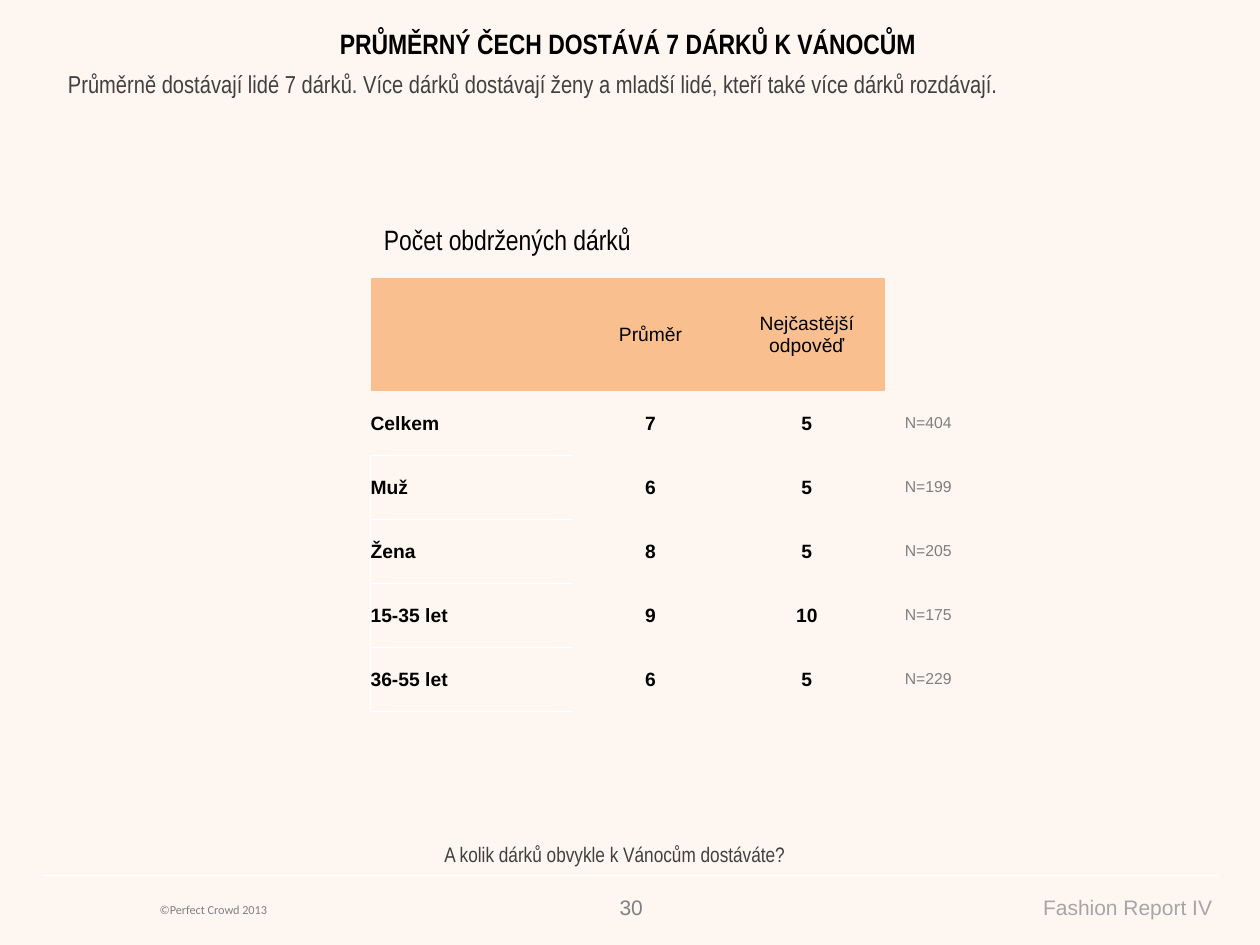
from lxml.etree import SubElement
from pptx import Presentation
from pptx.dml.color import RGBColor
from pptx.enum.shapes import MSO_CONNECTOR
from pptx.enum.text import MSO_ANCHOR, MSO_AUTO_SIZE, PP_ALIGN
from pptx.oxml.ns import qn
from pptx.util import Cm, Pt

COLORS = {
    "background": "FEF6F0",
    "header": "FABF8F",
    "white": "FFFFFF",
    "black": "000000",
    "body": "404040",
    "muted": "808080",
    "sample": "7F7F7F",
    "report": "A6A6A6",
}
PLAIN_TABLE_STYLE = "{2D5ABB26-0587-4C30-8999-92F81FD0307C}"
ROW_HEIGHT = 1.29
HEADER_HEIGHT = 2.28
TABLE_TOP = 5.61

GIFT_ROWS = [
    ("", "Průměr", "Nejčastější odpověď"),
    ("Celkem", "7", "5"),
    ("Muž", "6", "5"),
    ("Žena", "8", "5"),
    ("15-35 let", "9", "10"),
    ("36-55 let", "6", "5"),
]
SAMPLE_ROWS = [("N=404",), ("N=199",), ("N=205",), ("N=175",), ("N=229",)]


def rgb(name):
    return RGBColor.from_string(COLORS[name])


def format_text(text_frame, size, color, font="Arial", bold=False, align=PP_ALIGN.LEFT):
    for paragraph in text_frame.paragraphs:
        paragraph.alignment = align
        for run in paragraph.runs:
            run.font.name = font
            run.font.size = Pt(size)
            run.font.bold = bold
            run.font.color.rgb = rgb(color)


def add_text(slide, text, box, size, color, grow=True, anchor=MSO_ANCHOR.TOP, **style):
    """Add a text box; box is left, top, width and height in centimetres."""
    shape = slide.shapes.add_textbox(*(Cm(length) for length in box))
    text_frame = shape.text_frame
    text_frame.word_wrap = True
    text_frame.auto_size = MSO_AUTO_SIZE.SHAPE_TO_FIT_TEXT if grow else MSO_AUTO_SIZE.NONE
    text_frame.vertical_anchor = anchor
    text_frame.text = text
    format_text(text_frame, size, color, **style)


def add_footer_line(slide):
    line = slide.shapes.add_connector(
        MSO_CONNECTOR.STRAIGHT, Cm(0.84), Cm(17.65), Cm(24.56), Cm(17.65))
    line.line.color.rgb = rgb("white")
    line.line.width = Pt(0.75)
    SubElement(line._element.spPr, qn("a:effectLst"))


def add_borders(cell, sides):
    """Draw thin white borders; sides are given in the order L, R, T, B."""
    for side in sides:
        border = SubElement(cell._tc.get_or_add_tcPr(), qn(f"a:ln{side}"), w=str(Pt(0.5)))
        fill = SubElement(border, qn("a:solidFill"))
        SubElement(fill, qn("a:srgbClr"), val=COLORS["white"])


def add_plain_table(slide, rows, left, top, widths, heights):
    """Add a table without style, margins or fills and return it."""
    table = slide.shapes.add_table(
        len(rows), len(widths), Cm(left), Cm(top), Cm(sum(widths)), Cm(sum(heights))).table
    table.first_row = table.horz_banding = False
    table._tbl.tblPr.find(qn("a:tableStyleId")).text = PLAIN_TABLE_STYLE
    for column, width in zip(table.columns, widths):
        column.width = Cm(width)
    for row, height, texts in zip(table.rows, heights, rows):
        row.height = Cm(height)
        for cell, text in zip(row.cells, texts):
            cell.text = text
            cell.vertical_anchor = MSO_ANCHOR.MIDDLE
            cell.margin_left = cell.margin_right = cell.margin_top = cell.margin_bottom = 0
    return table


def add_gift_table(slide):
    heights = [HEADER_HEIGHT] + [ROW_HEIGHT] * (len(GIFT_ROWS) - 1)
    table = add_plain_table(slide, GIFT_ROWS, 7.47, TABLE_TOP, [4.07, 3.15, 3.15], heights)
    for row_index, row in enumerate(table.rows):
        for column_index, cell in enumerate(row.cells):
            is_header, is_label = row_index == 0, column_index == 0
            format_text(cell.text_frame, 11, "black", bold=not is_header,
                        align=PP_ALIGN.LEFT if is_label else PP_ALIGN.CENTER)
            if is_header:
                cell.fill.solid()
                cell.fill.fore_color.rgb = rgb("header")
                continue
            if is_label:
                add_borders(cell, "B" if row_index == 1 else "LTB")
            cell.fill.background()


def add_sample_table(slide):
    table = add_plain_table(slide, SAMPLE_ROWS, 18.24, TABLE_TOP + HEADER_HEIGHT,
                            [1.55], [ROW_HEIGHT] * len(SAMPLE_ROWS))
    for cell in table.iter_cells():
        format_text(cell.text_frame, 9, "sample")
        cell.fill.background()


def add_footer(slide):
    add_footer_line(slide)
    add_text(slide, "©Perfect Crowd 2013", (2.97, 18.06, 7.39, 0.56), 7, "muted",
             font="Calibri")
    add_text(slide, "Fashion Report IV", (15.27, 17.91, 9.42, 0.76), 12, "report",
             align=PP_ALIGN.RIGHT)
    add_text(slide, "30", (12.17, 17.91, 1.04, 0.76), 12, "muted", align=PP_ALIGN.RIGHT)


def main():
    presentation = Presentation()
    presentation.slide_width, presentation.slide_height = Cm(25.4), Cm(19.05)
    slide = presentation.slides.add_slide(presentation.slide_layouts[6])
    slide.background.fill.solid()
    slide.background.fill.fore_color.rgb = rgb("background")

    add_footer(slide)
    add_text(slide, "A kolik dárků obvykle k\u00a0Vánocům dostáváte?".replace("\u00a0", " "),
             (0.89, 16.33, 23.01, 1.27), 12, "body", grow=False,
             anchor=MSO_ANCHOR.BOTTOM, font="Arial Narrow", align=PP_ALIGN.CENTER)
    add_text(slide, "PRŮMĚRNÝ ČECH DOSTÁVÁ 7 DÁRKŮ K VÁNOCŮM", (1.42, 0.41, 22.48, 0.94),
             16, "black", font="Arial Narrow", bold=True, align=PP_ALIGN.CENTER)
    add_text(slide, "Průměrně dostávají lidé 7 dárků. Více dárků dostávají ženy a mladší lidé, "
             "kteří také více dárků rozdávají.", (1.12, 1.27, 23.44, 6.96), 14, "body",
             grow=False, font="Arial Narrow")
    add_gift_table(slide)
    add_sample_table(slide)
    add_text(slide, "Počet obdržených dárků", (7.49, 4.37, 8.79, 0.94), 16, "black",
             font="Arial Narrow")
    presentation.save("out.pptx")


if __name__ == "__main__":
    main()
